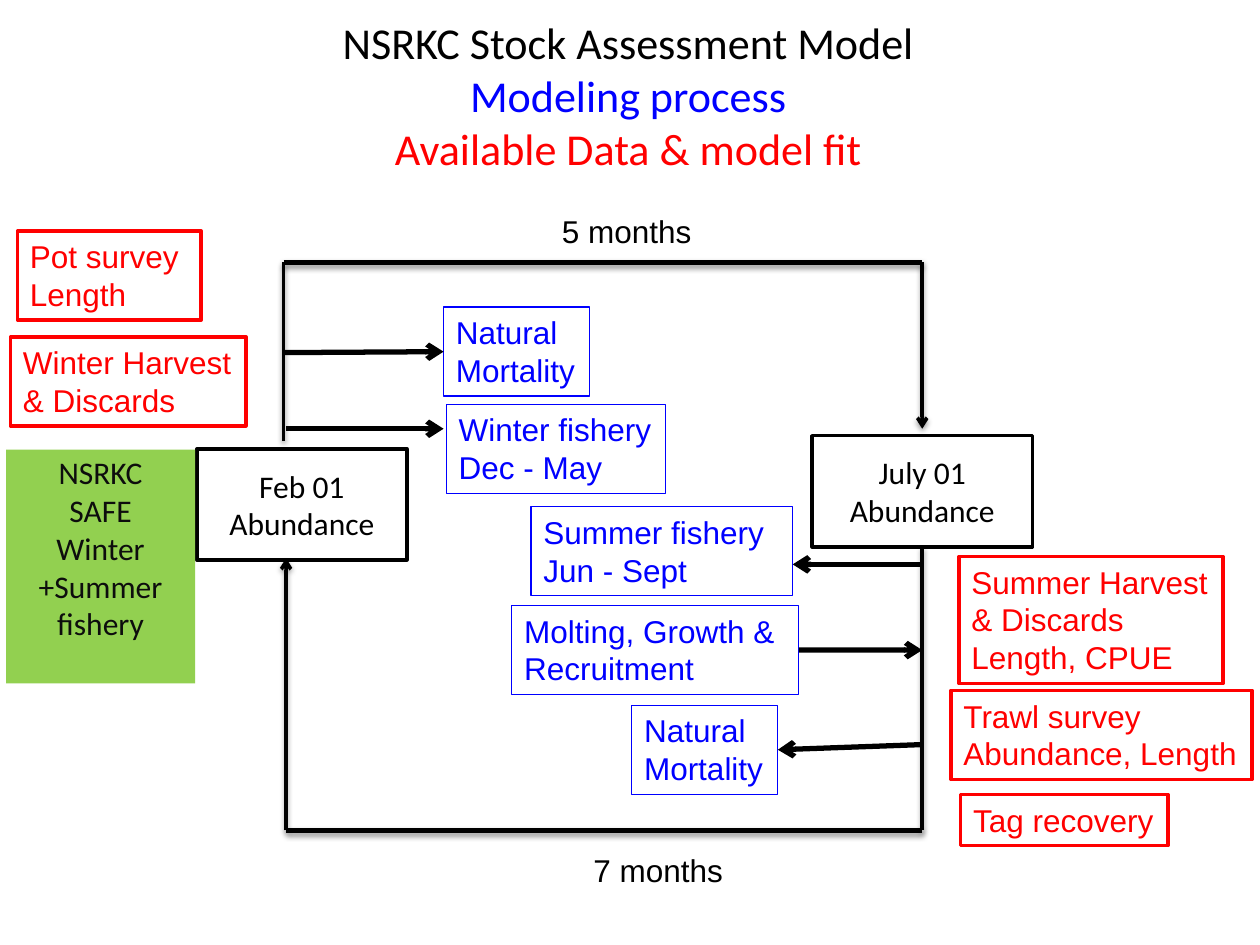
from lxml.etree import SubElement
from pptx import Presentation
from pptx.dml.color import RGBColor
from pptx.enum.shapes import MSO_CONNECTOR, MSO_SHAPE
from pptx.enum.text import MSO_ANCHOR, PP_ALIGN
from pptx.oxml.ns import qn
from pptx.util import Pt

BLACK, BLUE, RED = "000000", "0000FF", "FF0000"
GREEN, DARK = "92D050", "0D0D0D"
TOP, LEFT, BOTTOM, RIGHT = range(4)


def rgb(hex_color):
    return RGBColor.from_string(hex_color)


class Diagram:
    body_font = "Arial"
    heading_font = "Calibri"
    text_size = 18
    title_size = 25.2

    def __init__(self, slide):
        self.slide = slide

    def set_text(self, frame, text, colors, font, size, align, anchor):
        """Fill a text frame; runs take the colours in turn, the last one repeating."""
        frame.word_wrap = True
        frame.vertical_anchor = anchor
        frame.text = text
        for paragraph in frame.paragraphs:
            paragraph.alignment = align
            for index, run in enumerate(paragraph.runs):
                run.font.name = font
                run.font.size = Pt(size)
                run.font.color.rgb = rgb(colors[min(index, len(colors) - 1)])

    def title(self, text, colors, left, top, width, height):
        box = self.slide.shapes.add_textbox(Pt(left), Pt(top), Pt(width), Pt(height))
        self.set_text(box.text_frame, text, colors, self.heading_font,
                      self.title_size, PP_ALIGN.CENTER, MSO_ANCHOR.MIDDLE)

    def duration(self, text, left, top):
        box = self.slide.shapes.add_textbox(Pt(left), Pt(top), Pt(89), Pt(29))
        self.set_text(box.text_frame, text, [BLACK], self.body_font,
                      self.text_size, PP_ALIGN.LEFT, MSO_ANCHOR.TOP)
        box.text_frame.margin_right = 0

    def rectangle(self, left, top, width, height, line=None, weight=2, fill=None):
        box = self.slide.shapes.add_shape(
            MSO_SHAPE.RECTANGLE, Pt(left), Pt(top), Pt(width), Pt(height))
        box.shadow.inherit = False
        if fill:
            box.fill.solid()
            box.fill.fore_color.rgb = rgb(fill)
        else:
            box.fill.background()
        if line:
            box.line.color.rgb = rgb(line)
            box.line.width = Pt(weight)
        else:
            box.line.fill.background()
        return box

    def state(self, text, left, top, width, height, line=BLACK, fill=None, color=BLACK):
        """Add a centred box for a stock state or its report."""
        box = self.rectangle(left, top, width, height, line, fill=fill)
        self.set_text(box.text_frame, text, [color], self.heading_font,
                      self.text_size, PP_ALIGN.CENTER, MSO_ANCHOR.MIDDLE)
        return box

    def note(self, text, left, top, width, color, weight):
        """Add a left-aligned box whose height follows its number of lines."""
        height = 7.4 + 21.75 * len(text.split("\n"))
        box = self.rectangle(left, top, width, height, color, weight)
        self.set_text(box.text_frame, text, [color], self.body_font,
                      self.text_size, PP_ALIGN.LEFT, MSO_ANCHOR.TOP)
        box.text_frame.margin_right = 0
        return box

    def process(self, text, left, top, width):
        return self.note(text, left, top, width, BLUE, 0.75)

    def data(self, text, left, top, width):
        return self.note(text, left, top, width, RED, 2)

    def line(self, start, end, weight=3, arrow=True, shadow=False, shapes=None):
        shapes = shapes or self.slide.shapes
        points = [Pt(value) for value in (*start, *end)]
        connector = shapes.add_connector(MSO_CONNECTOR.STRAIGHT, *points)
        connector.line.color.rgb = rgb(BLACK)
        connector.line.width = Pt(weight)
        properties = connector._element.spPr
        if arrow:
            SubElement(properties.find(qn("a:ln")), qn("a:tailEnd"), type="arrow")
        effects = SubElement(properties, qn("a:effectLst"))
        if shadow:
            outer = SubElement(effects, qn("a:outerShdw"), blurRad=str(Pt(3.1)),
                               dist=str(Pt(1.6)), dir="5400000", rotWithShape="0")
            color = SubElement(outer, qn("a:srgbClr"), val=BLACK)
            SubElement(color, qn("a:alpha"), val="38000")
        return connector

    def route(self, corners):
        """Group three lines through four corners, the last one with an arrowhead."""
        shapes = self.slide.shapes.add_group_shape().shapes
        return [self.line(start, end, weight, arrow, True, shapes)
                for start, end, weight, arrow in zip(
                    corners, corners[1:], (2, 3, 2), (False, False, True))]


def main():
    presentation = Presentation()
    presentation.slide_width, presentation.slide_height = Pt(720), Pt(540)
    diagram = Diagram(presentation.slides.add_slide(presentation.slide_layouts[6]))

    diagram.title("NSRKC Stock Assessment Model\vModeling process\v"
                  "Available Data & model fit", [BLACK, BLUE, RED], 24, 12, 670, 84)

    diagram.state("Feb 01\nAbundance", 112.5, 256.5, 120, 63.5)
    july = diagram.state("July 01\nAbundance", 464, 249, 126, 63.5)
    report = diagram.state("NSRKC\nSAFE\vWinter\v+Summer\vfishery", 3.5, 257, 108, 133.5,
                           line=None, fill=GREEN, color=DARK)
    report.text_frame.margin_bottom = Pt(25)

    february_x, july_x = 163, 527
    diagram.route([(162, 252), (162, 150), (july_x, 150), (july_x, 245)])
    july_exit = diagram.route([(july_x, 312.5), (july_x, 474.5),
                               (february_x + 0.5, 474.5), (february_x + 0.5, 319)])[0]
    july_exit.begin_connect(july, BOTTOM)

    winter_mortality = diagram.process("Natural\nMortality", 253.5, 175.5, 83.5)
    diagram.process("Winter fishery\nDec - May", 255, 231, 125.5)
    diagram.process("Summer fishery\nJun - Sept", 303.5, 289.5, 149.5)
    growth = diagram.process("Molting, Growth &\nRecruitment", 292.5, 346, 164)
    summer_mortality = diagram.process("Natural\nMortality", 361, 403, 83.5)

    diagram.line((162, 201.5), (253.5, 201)).end_connect(winter_mortality, LEFT)
    diagram.line((february_x + 0.5, 245), (253.5, 245))
    diagram.line((july_x, 322.5), (453, 322.5))
    diagram.line((457, 371.5), (july_x, 371.5)).begin_connect(growth, RIGHT)
    diagram.line((july_x, 425.5), (444, 428.5)).end_connect(summer_mortality, RIGHT)

    for text, left, top, width in [
        ("Pot survey\nLength", 10, 132, 105),
        ("Winter Harvest\n& Discards", 6, 192.5, 134.5),
        ("Summer Harvest\n& Discards\nLength, CPUE", 548, 318, 151),
        ("Trawl survey\nAbundance, Length", 543.5, 394.5, 172),
        ("Tag recovery", 549, 454, 118.5),
    ]:
        diagram.data(text, left, top, width)

    diagram.duration("5 months", 314, 117.5)
    diagram.duration("7 months", 332, 483)

    presentation.save("out.pptx")


if __name__ == "__main__":
    main()
